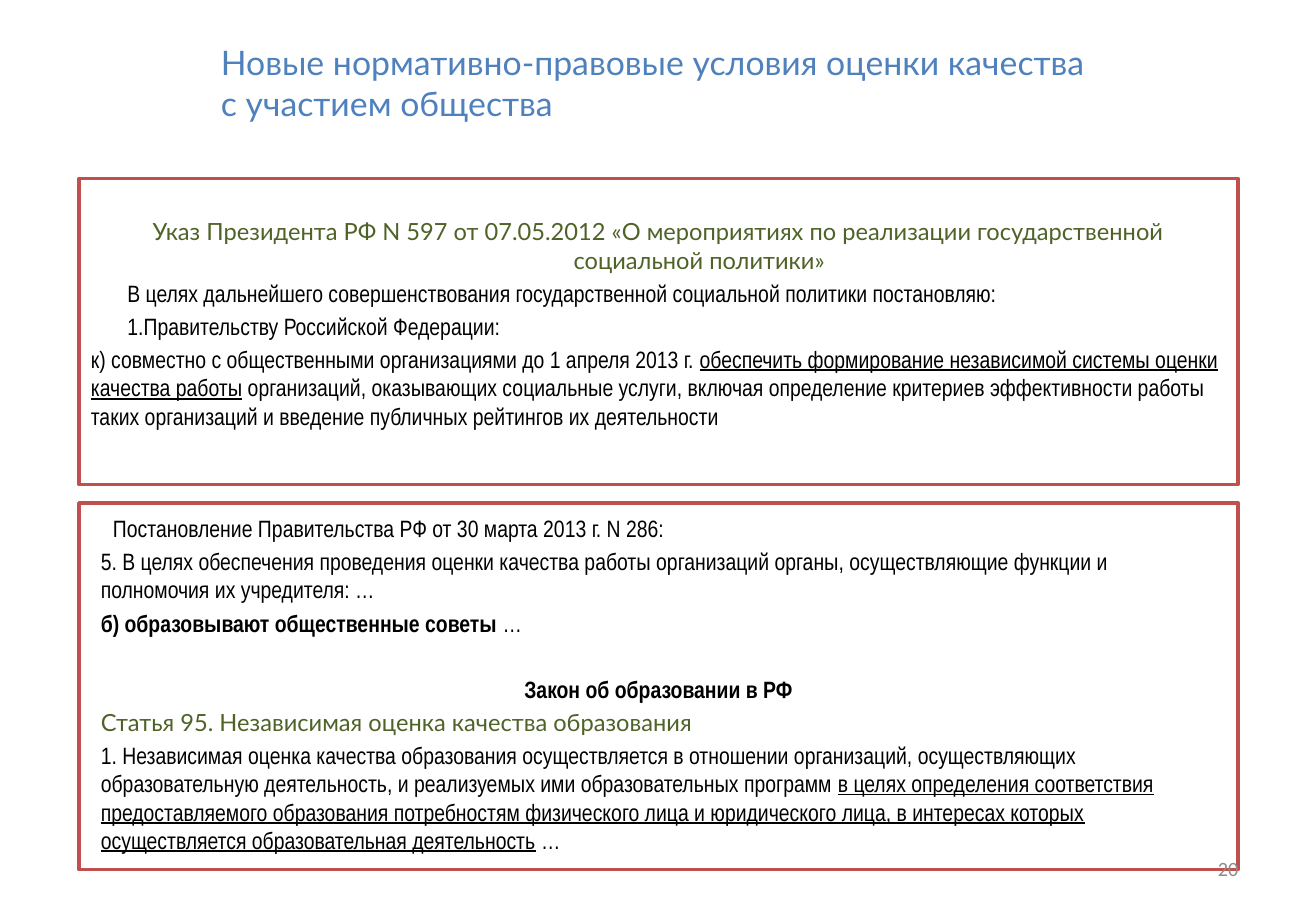
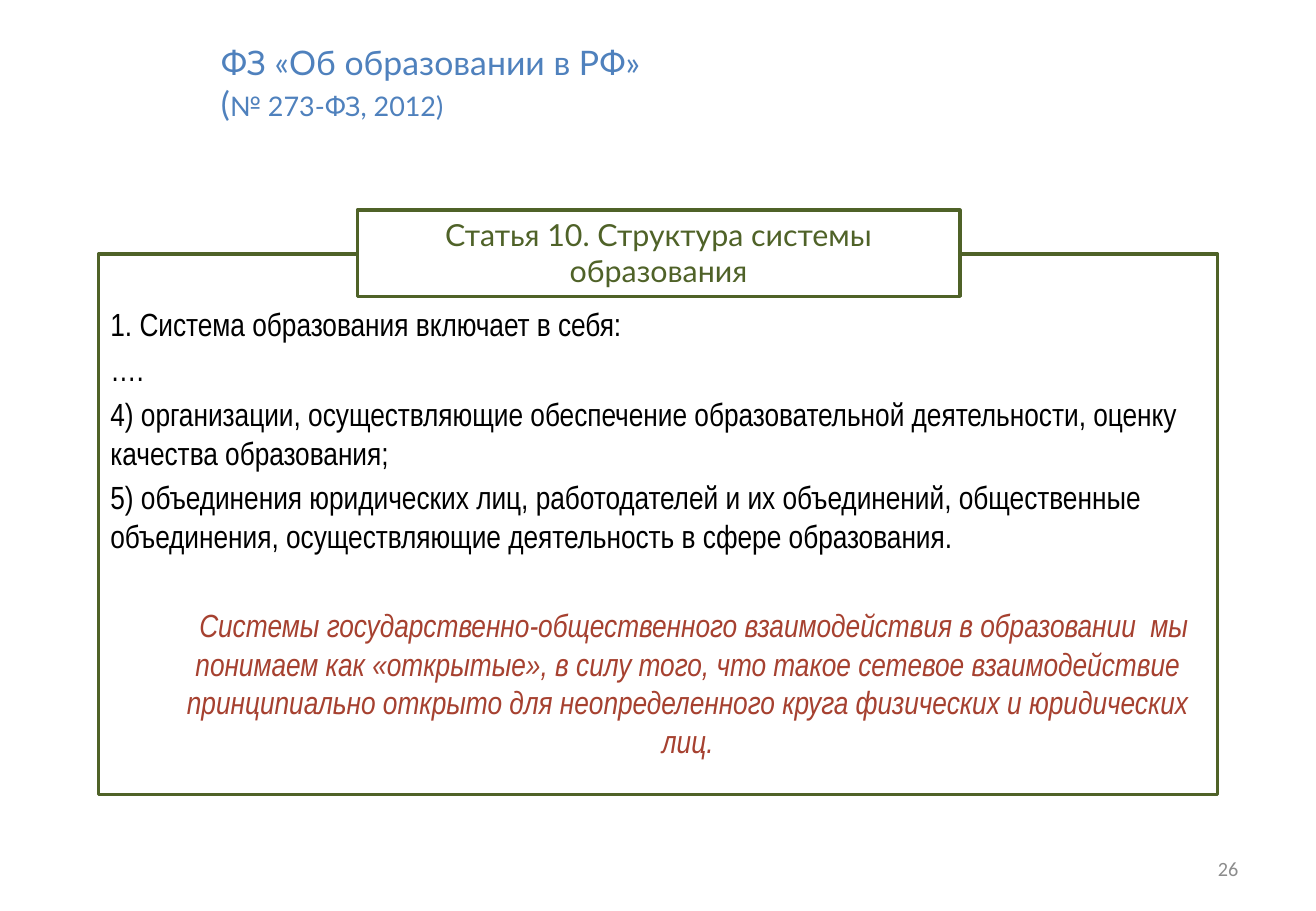
from lxml.etree import SubElement
from pptx import Presentation
from pptx.dml.color import RGBColor
from pptx.enum.shapes import MSO_SHAPE
from pptx.enum.text import MSO_ANCHOR, PP_ALIGN
from pptx.oxml.ns import qn
from pptx.util import Pt

EMU_PER_PX = 9144
COLORS = {
    "title": "4F81BD",
    "olive": "4F6228",
    "red": "C0504D",
    "quote": "A64130",
    "body": "000000",
    "number": "8C8C8C",
    "paper": "FFFFFF",
}
HEADING = {"face": "Lato", "color": "olive"}
TITLE = {"face": "Lato", "color": "title", "size": 20}
UNDERLINED = {"underline": True}
BOLD = {"bold": True}


def px(length):
    return length * EMU_PER_PX


def rgb(name):
    return RGBColor.from_string(COLORS[name])


def style_run(run, size, face, color, bold=False, italic=False, underline=False):
    font = run.font
    font.size = Pt(size)
    font.name = face
    font.color.rgb = rgb(color)
    font.bold = bold
    font.italic = italic
    font.underline = underline


def write(frame, *pieces, align=PP_ALIGN.LEFT, left=0, first=0, extra_gap=0,
          numbered=False, size=14, face="Arial Narrow", color="body", **emphasis):
    paragraph = frame.paragraphs[0]
    if paragraph.runs:
        paragraph = frame.add_paragraph()
        paragraph.space_before = Pt(round(size * 0.2 + extra_gap, 1))
    paragraph.alignment = align
    properties = paragraph._p.get_or_add_pPr()
    properties.set("marL", str(px(left)))
    properties.set("indent", str(px(first)))
    if numbered:
        SubElement(properties, qn("a:buAutoNum"), type="arabicPeriod")
    base = {"size": size, "face": face, "color": color, **emphasis}
    for piece in pieces:
        content, changes = (piece, {}) if isinstance(piece, str) else piece
        for index, line in enumerate(content.split("\n")):
            if index:
                paragraph.add_line_break()
            run = paragraph.add_run()
            run.text = line
            style_run(run, **{**base, **changes})


def set_up_frame(frame, anchor, insets):
    frame.word_wrap = True
    frame.vertical_anchor = anchor
    (frame.margin_left, frame.margin_top,
     frame.margin_right, frame.margin_bottom) = map(px, insets)
    return frame


def add_panel(slide, box, border, anchor=MSO_ANCHOR.TOP, insets=(10, 5, 10, 5)):
    panel = slide.shapes.add_shape(MSO_SHAPE.RECTANGLE, *map(px, box))
    panel.shadow.inherit = False
    panel.fill.solid()
    panel.fill.fore_color.rgb = rgb("paper")
    panel.line.color.rgb = rgb(border)
    panel.line.width = Pt(2)
    return set_up_frame(panel.text_frame, anchor, insets)


def add_label(slide, box):
    label = slide.shapes.add_textbox(*map(px, box))
    return set_up_frame(label.text_frame, MSO_ANCHOR.MIDDLE, (10, 5, 10, 5))


def add_title_and_number(slide, title, number):
    write(add_label(slide, (172, 21, 843, 94)), *title, **TITLE)
    write(add_label(slide, (776, 695, 253, 40)), number, align=PP_ALIGN.RIGHT,
          size=12, face="Calibri", color="number")


def build_conditions(slide):
    decree = add_panel(slide, (65, 147, 954, 252), "red", MSO_ANCHOR.MIDDLE, (10, 5, 10, 18))
    write(decree, "Указ Президента РФ N 597 от 07.05.2012 «О мероприятиях по реализации "
          "государственной социальной политики»",
          align=PP_ALIGN.CENTER, left=67, first=-67, **HEADING)
    write(decree, "В целях дальнейшего совершенствования государственной социальной "
          "политики постановляю:", align=PP_ALIGN.JUSTIFY, first=30)
    write(decree, "Правительству Российской Федерации:", first=30, numbered=True)
    write(decree, "к) совместно с общественными организациями до 1 апреля 2013 г. ",
          ("обеспечить формирование независимой системы оценки качества работы", UNDERLINED),
          " организаций, оказывающих социальные услуги, включая определение критериев "
          "эффективности работы таких организаций и введение публичных рейтингов их "
          "деятельности")

    resolution = add_panel(slide, (65, 414, 954, 302), "red", insets=(18, 9, 18, 9))
    write(resolution, "Постановление Правительства РФ от 30 марта 2013 г. N 286:", first=10)
    write(resolution, "5. В целях обеспечения проведения оценки качества работы организаций "
          "органы, осуществляющие функции и полномочия их учредителя: …")
    write(resolution, ("б) образовывают общественные советы", BOLD), " …")
    write(resolution, "Закон об образовании в РФ", align=PP_ALIGN.CENTER,
          extra_gap=19.7, bold=True)
    write(resolution, "Статья 95. Независимая оценка качества образования", **HEADING)
    write(resolution, "1. Независимая оценка качества образования осуществляется в отношении "
          "организаций, осуществляющих образовательную деятельность, и реализуемых ими "
          "образовательных программ ",
          ("в целях определения соответствия предоставляемого образования потребностям "
           "физического лица и юридического лица, в интересах которых осуществляется "
           "образовательная деятельность", UNDERLINED), " …")
    add_title_and_number(slide, ["Новые нормативно-правовые условия оценки качества\n"
                                 "с участием общества"], "20")


def build_education_law(slide):
    structure = add_panel(slide, (81, 209, 921, 445), "olive", insets=(10, 42, 10, 5))
    for clause in (
        "1. Система образования включает в себя:",
        "….",
        "4) организации, осуществляющие обеспечение образовательной деятельности, "
        "оценку качества образования;",
        "5) объединения юридических лиц, работодателей и их объединений, общественные "
        "объединения, осуществляющие деятельность в сфере образования.",
    ):
        write(structure, clause, size=19)
    write(structure, "Системы государственно-общественного взаимодействия в образовании  мы "
          "понимаем как «открытые», в силу того, что такое сетевое взаимодействие "
          "принципиально открыто для неопределенного круга физических и юридических лиц.",
          align=PP_ALIGN.CENTER, left=49, first=10, extra_gap=26.5, size=19,
          color="quote", italic=True)

    article = add_panel(slide, (294, 173, 496, 71), "olive")
    write(article, "Статья 10. Структура системы образования",
          align=PP_ALIGN.CENTER, size=18, **HEADING)
    add_title_and_number(slide, ["ФЗ «Об образовании в РФ»\n(",
                                 ("№ 273-ФЗ, 2012)", {"size": 16})], "26")


def main():
    deck = Presentation()
    deck.slide_width, deck.slide_height = px(1083), px(750)
    for build in (build_conditions, build_education_law):
        build(deck.slides.add_slide(deck.slide_layouts[6]))
    deck.save("out.pptx")


if __name__ == "__main__":
    main()
